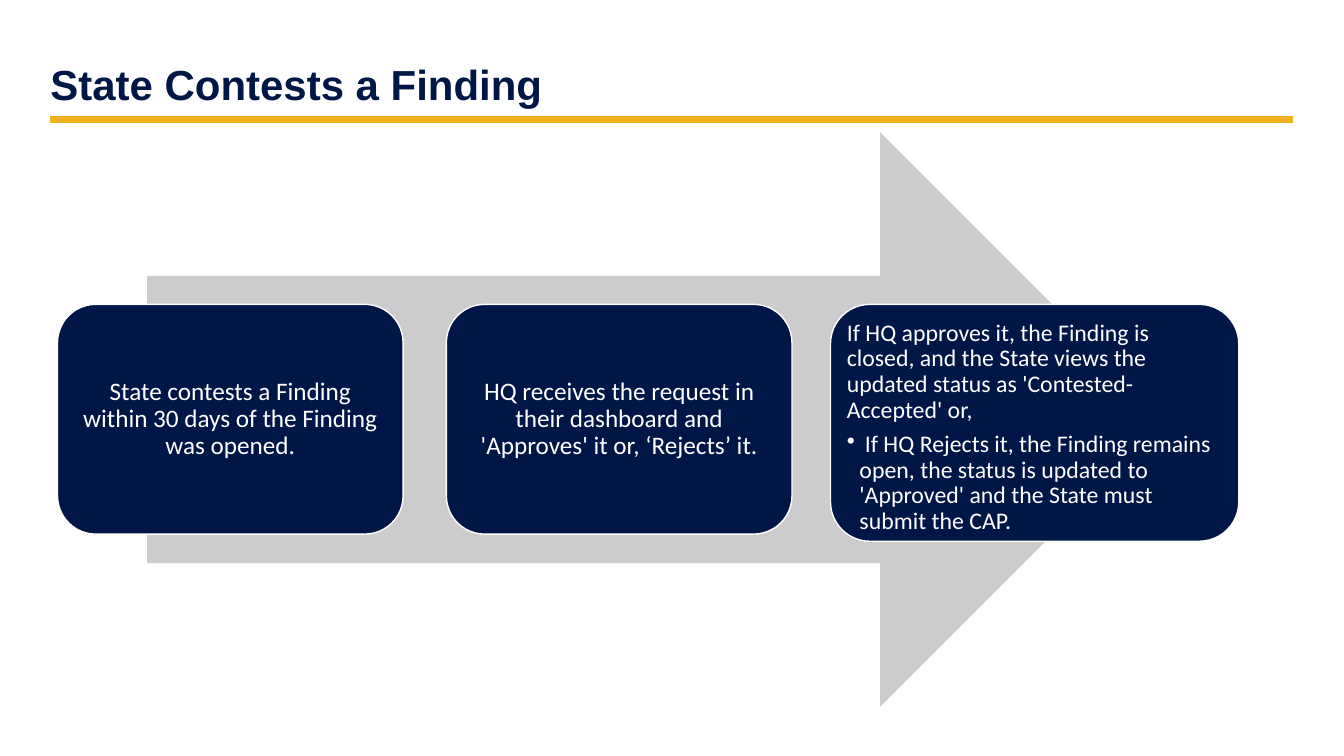
from pptx import Presentation
from pptx.dml.color import RGBColor
from pptx.enum.shapes import MSO_CONNECTOR, MSO_SHAPE
from pptx.enum.text import MSO_ANCHOR, PP_ALIGN
from pptx.oxml import parse_xml
from pptx.oxml.ns import nsdecls
from pptx.util import Cm, Pt

NAVY, GOLD, GREY, WHITE = "001647", "F1B01F", "CCCCCF", "FFFFFF"


def color(value):
    return RGBColor.from_string(value)


def set_frame(frame, anchor, left, top, right, bottom):
    frame.word_wrap = True
    frame.vertical_anchor = anchor
    frame.margin_left, frame.margin_top = Cm(left), Cm(top)
    frame.margin_right, frame.margin_bottom = Cm(right), Cm(bottom)


def write(paragraph, text, size=18, font="Calibri", fill=WHITE, bold=False,
          align=PP_ALIGN.LEFT, after=0, bullet=False):
    run = paragraph.add_run()
    run.text = text
    run.font.size, run.font.name, run.font.bold = Pt(size), font, bold
    run.font.color.rgb = color(fill)
    paragraph.alignment = align
    paragraph.line_spacing = 0.9
    paragraph.space_after = Pt(after)
    if bullet:
        properties = paragraph._p.get_or_add_pPr()
        properties.set("marL", str(Cm(0.32)))
        properties.set("indent", str(-Cm(0.32)))
        properties.append(parse_xml(f'<a:buChar {nsdecls("a")} char="•"/>'))


def add_block(slide, preset, box, fill, outline=None):
    shape = slide.shapes.add_shape(preset, *map(Cm, box))
    shape.shadow.inherit = False
    shape.fill.solid()
    shape.fill.fore_color.rgb = color(fill)
    if outline:
        shape.line.color.rgb = color(outline)
        shape.line.width = Pt(1)
    else:
        shape.line.fill.background()
    return shape


def add_heading(slide, box, text):
    left, top, width, height = box
    # Gold rule just below the title
    rule_top = top + height + 0.1
    rule = slide.shapes.add_connector(
        MSO_CONNECTOR.STRAIGHT, Cm(left), Cm(rule_top), Cm(left + width), Cm(rule_top))
    rule.line.color.rgb = color(GOLD)
    rule.line.width = Pt(5)
    rule._element.spPr.append(parse_xml(f'<a:effectLst {nsdecls("a")}/>'))
    # Title
    title = slide.shapes.add_textbox(*map(Cm, box))
    set_frame(title.text_frame, MSO_ANCHOR.BOTTOM, 0, 0.13, 0.25, 0.13)
    write(title.text_frame.paragraphs[0], text, size=30, font="Arial", fill=NAVY, bold=True)


def add_process(slide, box, steps, outcomes):
    left, top, width, height = box
    # Background arrow
    add_block(slide, MSO_SHAPE.RIGHT_ARROW, (left + 2.26, top, width - 4.06, height), GREY)
    step_top, step_width, step_height, pitch = top + 4.34, 8.71, 5.79, 9.8
    # Centred steps
    for index, text in enumerate(steps):
        step = add_block(slide, MSO_SHAPE.ROUNDED_RECTANGLE,
                         (left + index * pitch, step_top, step_width, step_height), NAVY, WHITE)
        set_frame(step.text_frame, MSO_ANCHOR.MIDDLE, 0.18, 0.18, 0.18, 0.18)
        write(step.text_frame.paragraphs[0], text, align=PP_ALIGN.CENTER, after=6)
    # Wider outcome box at the right edge
    outcome_width = 10.29
    outcome = add_block(slide, MSO_SHAPE.ROUNDED_RECTANGLE,
                        (left + width - outcome_width, step_top, outcome_width, 5.97),
                        NAVY, WHITE)
    frame = outcome.text_frame
    set_frame(frame, MSO_ANCHOR.TOP, 0.12, 0.12, 0.12, 0.12)
    approved, rejected = outcomes
    write(frame.paragraphs[0], approved, size=17, after=6)
    write(frame.add_paragraph(), rejected, size=17, after=3, bullet=True)


def main():
    presentation = Presentation()
    presentation.slide_width, presentation.slide_height = Cm(33.87), Cm(19.05)
    slide = presentation.slides.add_slide(presentation.slide_layouts[6])
    add_heading(slide, (1.27, 0.36, 31.32, 2.54), "State Contests a Finding")
    add_process(
        slide, (1.45, 3.33, 29.77, 14.48),
        ["State contests a Finding within 30 days of the Finding was opened.",
         "HQ receives the request in their dashboard and 'Approves' it or, ‘Rejects’ it."],
        ["If HQ approves it, the Finding is closed, and the State views the updated "
         "status as 'Contested-Accepted' or,",
         " If HQ Rejects it, the Finding remains open, the status is updated "
         "to 'Approved' and the State must submit the CAP."])
    presentation.save("out.pptx")


if __name__ == "__main__":
    main()
